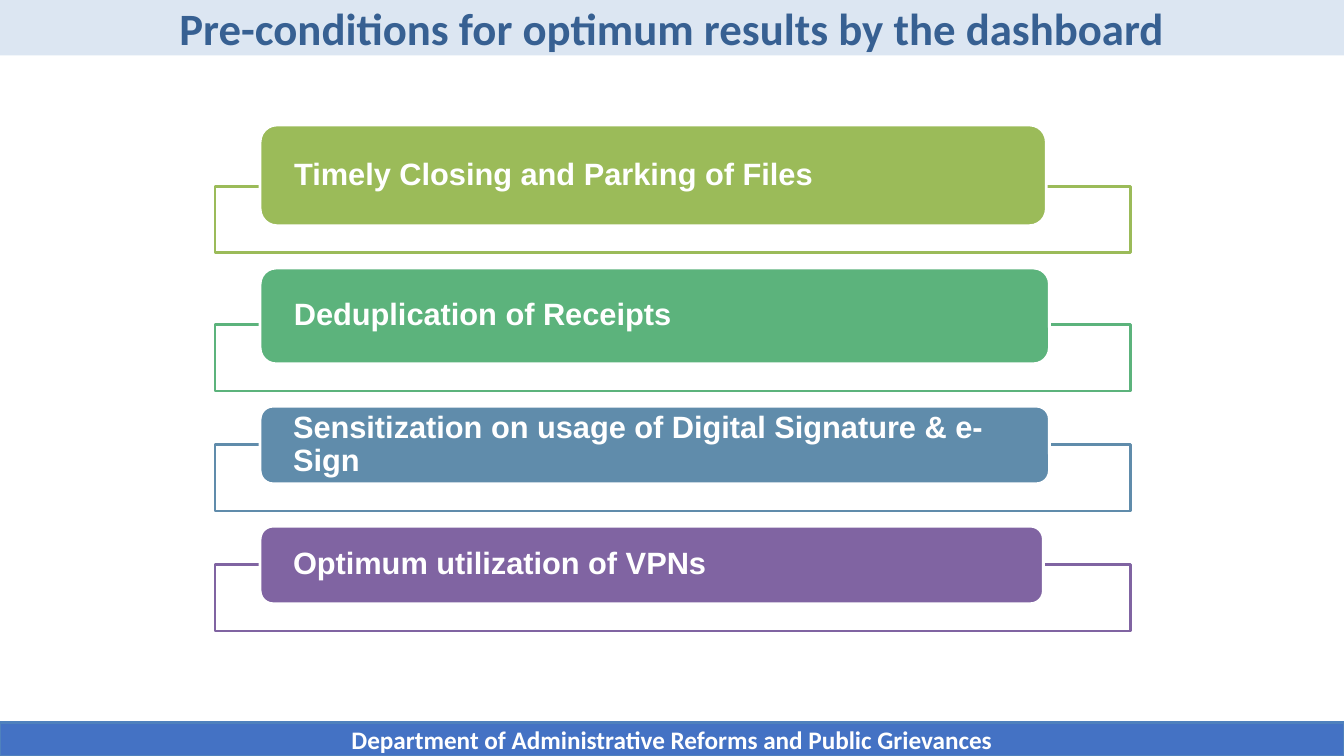
"""Build the slide on pre-conditions for optimum dashboard results."""
from dataclasses import dataclass

from lxml.etree import SubElement
from pptx import Presentation
from pptx.dml.color import RGBColor
from pptx.enum.shapes import MSO_SHAPE
from pptx.enum.text import MSO_ANCHOR, MSO_AUTO_SIZE, PP_ALIGN
from pptx.oxml.ns import qn
from pptx.shapes.autoshape import Shape
from pptx.slide import Slide
from pptx.util import Inches, Pt

W, H = Inches(13.33), Inches(7.5)
WHITE = RGBColor(0xFF, 0xFF, 0xFF)
PALE_BLUE = RGBColor(0xDC, 0xE6, 0xF2)
NAVY = RGBColor(0x37, 0x60, 0x92)
BLUE = RGBColor(0x44, 0x72, 0xC4)
EDGE_BLUE = RGBColor(0x4F, 0x81, 0xBD)
OLIVE = RGBColor(0x9B, 0xBB, 0x59)
GREEN = RGBColor(0x5C, 0xB3, 0x7C)
STEEL = RGBColor(0x60, 0x8C, 0xAB)
PURPLE = RGBColor(0x80, 0x64, 0xA2)

FRAME_LEFT, FRAME_COLS, FRAME_ROWS = 16, 68.1, 8.8
BAR_LEFT, BAR_TOP, BAR_INSET = 19.35, 16.53, 2.17
FRAME_DROP, GAP = 3.6, 2


@dataclass(frozen=True)
class Condition:
    """A bar's text, colour, width in columns and height in rows."""
    text: str
    color: RGBColor
    cols: float
    rows: float


CONDITIONS = [
    Condition("Timely Closing and Parking of Files", OLIVE, 58.5, 13.33),
    Condition("Deduplication of Receipts", GREEN, 58.73, 12.67),
    Condition("Sensitization on usage of Digital Signature & e-Sign", STEEL, 58.73, 10.27),
    Condition("Optimum utilization of VPNs", PURPLE, 58.28, 10.27),
]


def col(n: float) -> int:
    """Return the length of n columns, a hundred to the slide's width."""
    return round(W * n / 100)


def row(n: float) -> int:
    """Return the length of n rows, a hundred to the slide's height."""
    return round(H * n / 100)


def add_box(s: Slide, kind: MSO_SHAPE, left: float, top: float, cols: float,
            rows: float, fill: RGBColor, line: RGBColor) -> Shape:
    """Add a filled and outlined shape placed on the grid."""
    sp = s.shapes.add_shape(kind, col(left), row(top), col(cols), row(rows))
    sp.shadow.inherit = False
    sp.fill.solid()
    sp.fill.fore_color.rgb = fill
    sp.line.color.rgb = line
    sp.line.width = Pt(2)
    return sp


def write(sp: Shape, text: str, font: str, size: int, color: RGBColor,
          align: PP_ALIGN) -> None:
    """Write one bold run, centred vertically in the shape."""
    tf = sp.text_frame
    tf.word_wrap = True
    tf.auto_size = MSO_AUTO_SIZE.NONE
    tf.vertical_anchor = MSO_ANCHOR.MIDDLE
    p = tf.paragraphs[0]
    p.alignment = align
    r = p.add_run()
    r.text = text
    r.font.name, r.font.size, r.font.bold = font, Pt(size), True
    r.font.color.rgb = color


def add_title(s: Slide, text: str) -> None:
    """Turn the title placeholder into the band across the top."""
    sp = s.shapes.title
    sp.left, sp.top, sp.width, sp.height = 0, 0, W, row(7.33)
    sp.fill.solid()
    sp.fill.fore_color.rgb = PALE_BLUE
    tf = sp.text_frame
    tf.margin_left = tf.margin_right = tf.margin_top = tf.margin_bottom = 0
    write(sp, text, "Calibri", 32, NAVY, PP_ALIGN.CENTER)


def add_condition(s: Slide, c: Condition, top: float) -> float:
    """Add a frame with its bar and return the frame's bottom row."""
    bottom = top + c.rows + FRAME_DROP
    frame = add_box(s, MSO_SHAPE.RECTANGLE, FRAME_LEFT, bottom - FRAME_ROWS,
                    FRAME_COLS, FRAME_ROWS, WHITE, c.color)
    rgb = frame.fill._xPr.find(qn("a:solidFill"))[0]
    SubElement(rgb, qn("a:alpha"), val="90000")
    bar = add_box(s, MSO_SHAPE.ROUNDED_RECTANGLE, BAR_LEFT, top,
                  c.cols, c.rows, c.color, WHITE)
    tf = bar.text_frame
    tf.margin_left = tf.margin_right = col(BAR_INSET)
    tf.margin_top = tf.margin_bottom = 0
    write(bar, c.text, "Arial", 22, WHITE, PP_ALIGN.LEFT)
    tf.paragraphs[0].line_spacing = 0.9
    return bottom


def main() -> None:
    """Build and save the slide."""
    prs = Presentation()
    prs.slide_width, prs.slide_height = W, H
    s = prs.slides.add_slide(prs.slide_layouts[5])
    add_title(s, "Pre-conditions for optimum results by the dashboard")
    top = BAR_TOP
    for c in CONDITIONS:
        top = add_condition(s, c, top) + GAP
    footer = add_box(s, MSO_SHAPE.RECTANGLE, 0, 95.6, 100, 4.4, BLUE, EDGE_BLUE)
    write(footer, "Department of Administrative Reforms and Public Grievances",
          "Calibri", 18, WHITE, PP_ALIGN.CENTER)
    prs.save("out.pptx")


if __name__ == "__main__":
    main()
